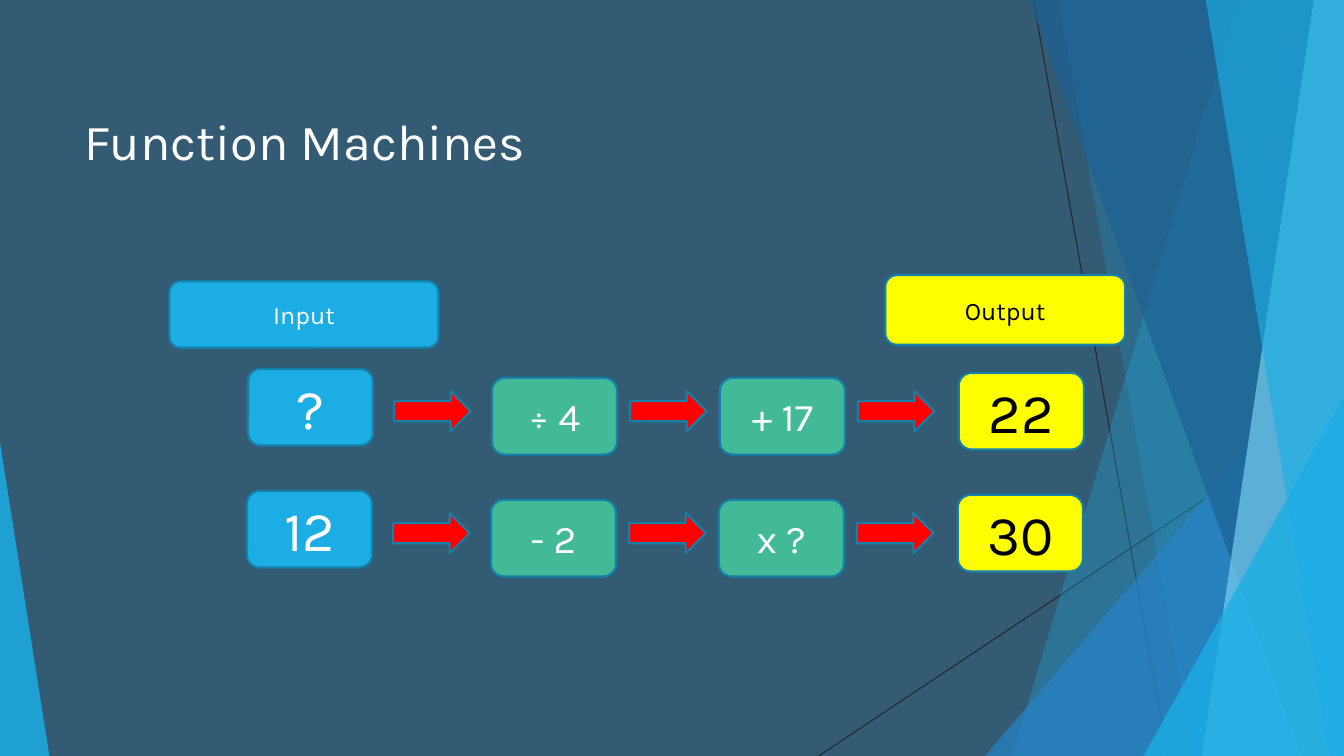
from dataclasses import dataclass

from lxml import etree
from pptx import Presentation
from pptx.dml.color import RGBColor
from pptx.enum.shapes import MSO_CONNECTOR, MSO_SHAPE
from pptx.enum.text import MSO_ANCHOR, MSO_AUTO_SIZE, PP_ALIGN
from pptx.oxml.ns import qn
from pptx.util import Inches, Pt

ROUNDED = MSO_SHAPE.ROUNDED_RECTANGLE
ARROW = MSO_SHAPE.RIGHT_ARROW
TRIANGLE = MSO_SHAPE.ISOSCELES_TRIANGLE
STRAIGHT = MSO_CONNECTOR.STRAIGHT
MIDDLE = MSO_ANCHOR.MIDDLE
LEFT, CENTER = PP_ALIGN.LEFT, PP_ALIGN.CENTER
NO_AUTOFIT = MSO_AUTO_SIZE.NONE
TITLE_ONLY_LAYOUT = 5
SLIDE_W, SLIDE_H = 13.33, 7.5


@dataclass(frozen=True)
class Theme:
    font: str = "Karla"
    background: str = "335B74"
    white: str = "FFFFFF"
    black: str = "000000"
    blue: str = "1CADE4"
    royal: str = "2683C6"
    navy: str = "1D6294"
    sky: str = "77CEEF"
    green: str = "42BA97"
    yellow: str = "FFFF00"
    red: str = "FF0000"
    outline: str = "1580A9"
    hairline: str = "262626"
    title_size: int = 36
    number_size: int = 40
    operation_size: int = 28
    label_size: int = 18
    outline_width: float = 1.5
    hairline_width: float = 0.75


THEME = Theme()


@dataclass(frozen=True)
class Shard:
    """Panel from a slanted left edge to the right edge of the slide."""
    top_x: float
    bottom_x: float
    color: str
    opacity: int


@dataclass(frozen=True)
class Corner:
    """Triangle standing on the bottom edge, with its apex at one side."""
    left: float
    top: float
    width: float
    apex: float
    color: str
    opacity: int


@dataclass(frozen=True)
class Box:
    text: str
    left: float
    top: float
    fill: str
    size: int
    color: str = THEME.white
    width: float = 1.24
    height: float = 0.76


@dataclass(frozen=True)
class Machine:
    left: float
    top: float
    start: str
    operations: tuple[str, str]
    result: str


HAIRLINES = (
    (10.25, 0, 11.58, SLIDE_H),
    (SLIDE_W, 4.03, 8.12, SLIDE_H),
)
DECORATION = (
    Shard(12.28, 10.04, THEME.blue, 30),
    Shard(10.5, 11.83, THEME.blue, 20),
    Corner(9.77, 3.33, 3.56, 1, THEME.royal, 72),
    Shard(10.21, 12.91, THEME.navy, 70),
    Shard(13.03, 11.92, THEME.sky, 70),
    Shard(11.96, 13.18, THEME.blue, 65),
    Corner(11.34, 3.93, 1.99, 1, THEME.blue, 80),
    Corner(0, 4.39, 0.49, 0, THEME.blue, 85),
)
LABELS = (
    Box("Input", 1.68, 2.79, THEME.blue, THEME.label_size,
        width=2.67, height=0.66),
    Box("Output", 8.78, 2.73, THEME.yellow, THEME.label_size, THEME.black,
        width=2.38, height=0.69),
)
MACHINES = (
    Machine(2.46, 3.66, "?", ("÷ 4", "+ 17"), "22"),
    Machine(2.45, 4.87, "12", ("- 2", "x ?"), "30"),
)
# Offsets from the top left corner of a machine
OPERATION_X = (2.42, 4.68)
OPERATION_Y = 0.09
RESULT_X, RESULT_Y = 7.05, 0.04
ARROW_X = (1.45, 3.79, 6.05)
ARROW_Y = 0.22
ARROW_W, ARROW_H = 0.76, 0.4


def write_text(shape, text: str, *, size: int, color: str, align=CENTER) -> None:
    frame = shape.text_frame
    frame.word_wrap = True
    frame.auto_size = NO_AUTOFIT
    frame.vertical_anchor = MIDDLE
    paragraph = frame.paragraphs[0]
    paragraph.alignment = align
    run = paragraph.add_run()
    run.text = text
    run.font.name = THEME.font
    run.font.size = Pt(size)
    run.font.color.rgb = RGBColor.from_string(color)


def paint(shape, color: str, *, opacity: int = 100, outlined: bool = False) -> None:
    shape.shadow.inherit = False
    shape.fill.solid()
    shape.fill.fore_color.rgb = RGBColor.from_string(color)
    if opacity < 100:
        fill_color = shape.element.spPr.find(f"{qn('a:solidFill')}/{qn('a:srgbClr')}")
        etree.SubElement(fill_color, qn("a:alpha"), val=str(opacity * 1000))
    if outlined:
        shape.line.color.rgb = RGBColor.from_string(THEME.outline)
        shape.line.width = Pt(THEME.outline_width)
    else:
        shape.line.fill.background()


def add_preset(shapes, kind, left: float, top: float, width: float, height: float):
    return shapes.add_shape(kind, Inches(left), Inches(top),
                            Inches(width), Inches(height))


def add_hairline(shapes, ends: tuple[float, float, float, float]) -> None:
    line = shapes.add_connector(STRAIGHT, *(Inches(value) for value in ends))
    line.line.color.rgb = RGBColor.from_string(THEME.hairline)
    line.line.width = Pt(THEME.hairline_width)
    etree.SubElement(line.element.spPr, qn("a:effectLst"))


def add_decoration(shapes, part: Shard | Corner) -> None:
    if isinstance(part, Corner):
        shape = add_preset(shapes, TRIANGLE, part.left, part.top,
                           part.width, SLIDE_H - part.top)
        shape.adjustments[0] = part.apex
    else:
        outline = shapes.build_freeform(Inches(part.top_x), 0)
        outline.add_line_segments([
            (Inches(SLIDE_W), 0),
            (Inches(SLIDE_W), Inches(SLIDE_H)),
            (Inches(part.bottom_x), Inches(SLIDE_H)),
        ], close=True)
        shape = outline.convert_to_shape()
    paint(shape, part.color, opacity=part.opacity)


def add_box(shapes, box: Box) -> None:
    shape = add_preset(shapes, ROUNDED, box.left, box.top, box.width, box.height)
    paint(shape, box.fill, outlined=True)
    write_text(shape, box.text, size=box.size, color=box.color)


def add_machine(shapes, machine: Machine) -> None:
    left, top = machine.left, machine.top
    add_box(shapes, Box(machine.start, left, top, THEME.blue, THEME.number_size))
    for operation, x in zip(machine.operations, OPERATION_X):
        add_box(shapes, Box(operation, left + x, top + OPERATION_Y,
                            THEME.green, THEME.operation_size))
    add_box(shapes, Box(machine.result, left + RESULT_X, top + RESULT_Y,
                        THEME.yellow, THEME.number_size, THEME.black))
    for x in ARROW_X:
        arrow = add_preset(shapes, ARROW, left + x, top + ARROW_Y, ARROW_W, ARROW_H)
        paint(arrow, THEME.red, outlined=True)


def main() -> None:
    deck = Presentation()
    deck.slide_width, deck.slide_height = Inches(SLIDE_W), Inches(SLIDE_H)
    slide = deck.slides.add_slide(deck.slide_layouts[TITLE_ONLY_LAYOUT])
    slide.background.fill.solid()
    slide.background.fill.fore_color.rgb = RGBColor.from_string(THEME.background)
    shapes = slide.shapes
    title = shapes.title
    title.left, title.top = Inches(0.74), Inches(0.67)
    title.width, title.height = Inches(9.4), Inches(1.44)
    write_text(title, "Function Machines", size=THEME.title_size,
               color=THEME.white, align=LEFT)
    for ends in HAIRLINES:
        add_hairline(shapes, ends)
    for part in DECORATION:
        add_decoration(shapes, part)
    for label in LABELS:
        add_box(shapes, label)
    for machine in MACHINES:
        add_machine(shapes, machine)
    deck.save("out.pptx")


if __name__ == "__main__":
    main()
